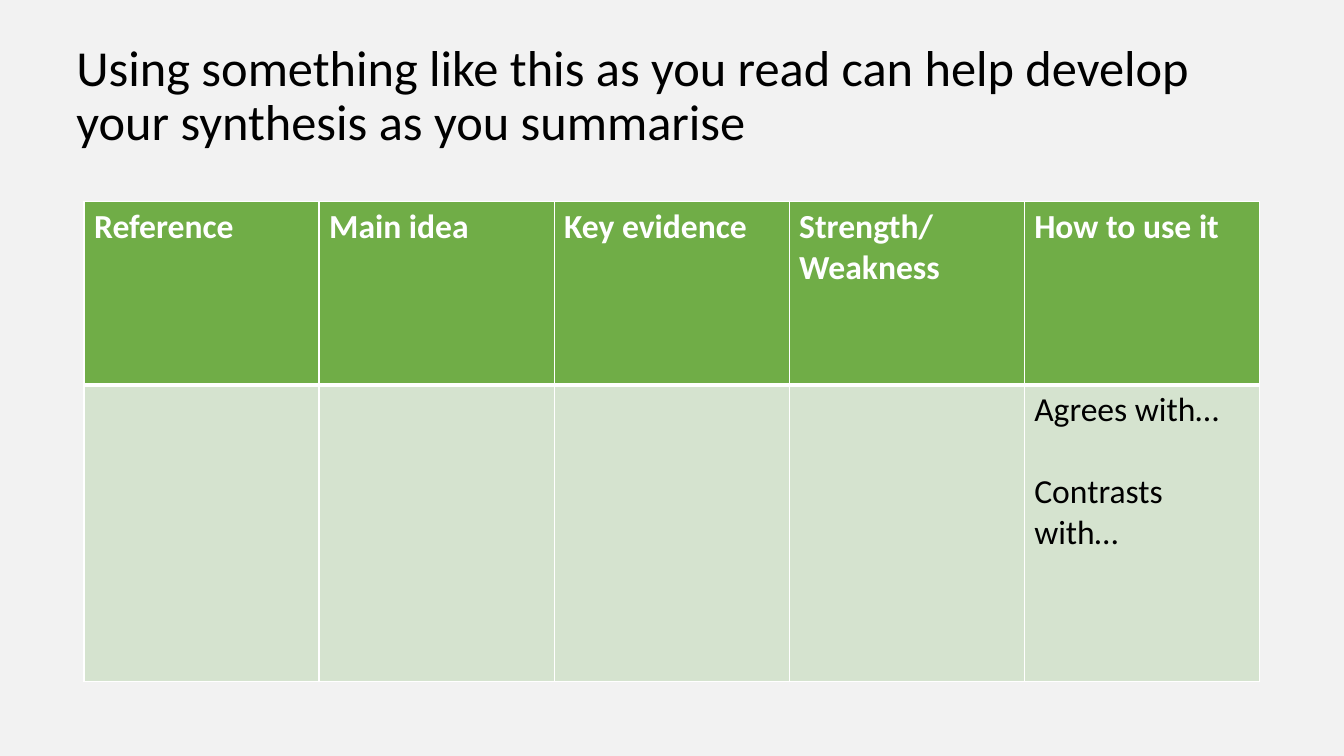
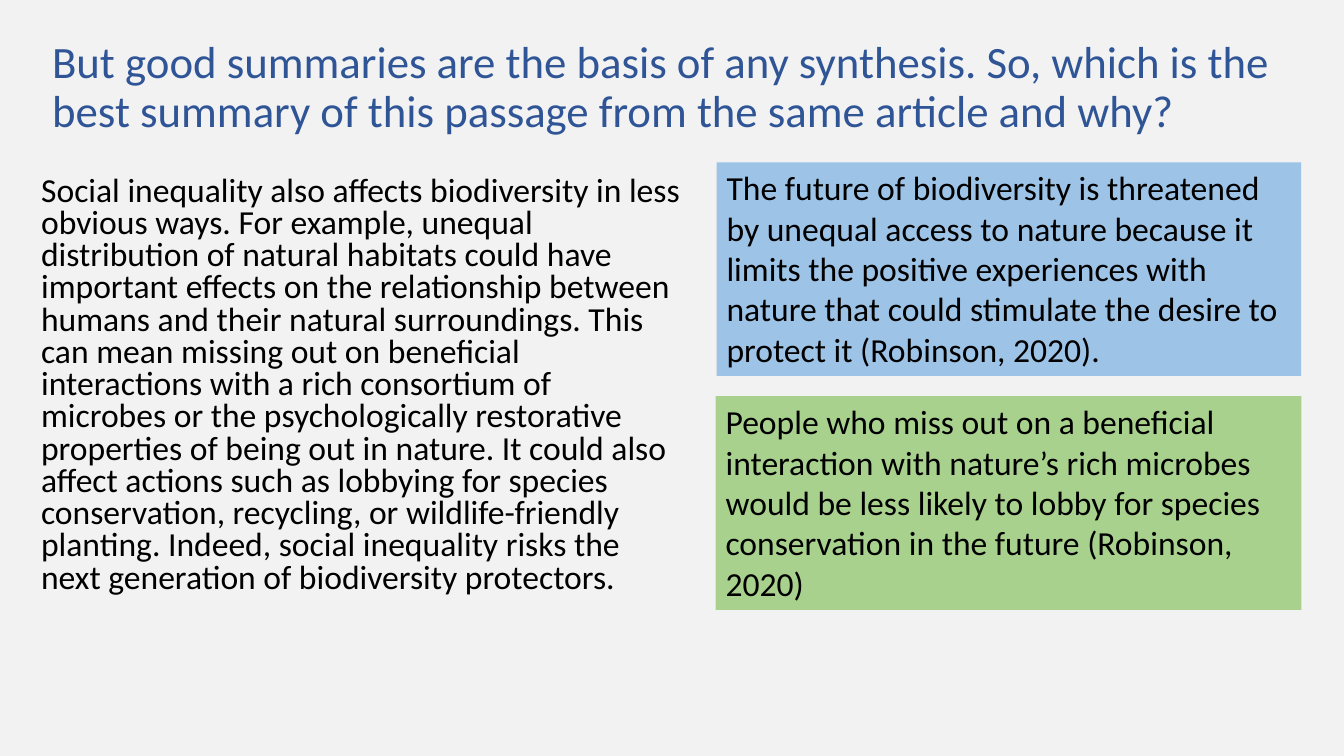
"""Build two slides on turning summaries into a synthesis."""
from dataclasses import dataclass

from lxml.etree import SubElement
from pptx import Presentation
from pptx.dml.color import RGBColor
from pptx.enum.shapes import MSO_SHAPE
from pptx.enum.text import MSO_ANCHOR, PP_ALIGN
from pptx.oxml.ns import qn
from pptx.slide import Slide
from pptx.table import _Cell
from pptx.text.text import TextFrame
from pptx.util import Pt

FONT = "Calibri"
COLORS = {
    "page": "F2F2F2",
    "black": "000000",
    "white": "FFFFFF",
    "title": "2F5597",
    "head": "70AD47",
    "row": "D5E3CF",
    "blue": "9DC3E6",
    "green": "A9D18E",
}
HEADS = ["Reference", "Main idea", "Key evidence", "Strength/Weakness", "How to use it"]
NOTES = ["", "", "", "", "Agrees with…\nContrasts with…"]
PASSAGE = (
    "Social inequality also affects biodiversity in less obvious ways. For example, "
    "unequal distribution of natural habitats could have important effects on the "
    "relationship between humans and their natural surroundings. This can mean missing "
    "out on beneficial interactions with a rich consortium of microbes or "
    "the psychologically restorative properties of being out in nature. It could also "
    "affect actions such as lobbying for species conservation, recycling, or "
    "wildlife-friendly planting. Indeed, social inequality risks the next generation "
    "of biodiversity protectors."
)


@dataclass
class Block:
    """A text block with its place and style, in points."""

    text: str
    left: float
    top: float
    width: float
    height: float
    size: float = 24
    color: str = "black"
    fill: str | None = None
    middle: bool = False
    pitch: float = 1.0
    before: float = 0


@dataclass
class Row:
    """A table row with its texts and style."""

    texts: list[str]
    height: float
    fill: str
    color: str
    bold: bool
    base: float


TITLES = [
    Block("Using something like this as you read can help develop your synthesis as you "
          "summarise", 47.5, 28.8, 846.7, 81.4, 36, middle=True, pitch=0.9),
    Block("But good summaries are the basis of any synthesis. So, which is the best summary "
          "of this passage from the same article and why?", 30.2, 18, 900, 90.7, 32,
          "title", middle=True, pitch=0.9),
]
BLOCKS = [
    Block(PASSAGE, 22.3, 122.4, 470.9, 342.7, pitch=0.8, before=10),
    Block("The future of biodiversity is threatened by unequal access to nature because it "
          "limits the positive experiences with nature that could stimulate the desire to "
          "protect it (Robinson, 2020).", 511.9, 115.9, 417.6, 152.6, fill="blue"),
    Block("People who miss out on a beneficial interaction with nature’s rich microbes would "
          "be less likely to lobby for species conservation in the future (Robinson, 2020)",
          511.2, 283, 418.3, 152.6, fill="green"),
]
ROWS = [
    Row(HEADS, 131, "head", "white", True, 3),
    Row(NOTES, 211.7, "row", "black", False, 1),
]


def shade(name: str) -> RGBColor:
    """Return a named colour."""
    return RGBColor.from_string(COLORS[name])


def style(frame: TextFrame, size: float, color: str, bold: bool = False) -> None:
    """Set the font of all text in a frame."""
    for para in frame.paragraphs:
        para.alignment = PP_ALIGN.LEFT
        for run in para.runs:
            run.font.name = FONT
            run.font.size = Pt(size)
            run.font.bold = bold
            run.font.color.rgb = shade(color)


def add_block(slide: Slide, block: Block) -> None:
    """Draw a text box, or a filled box when it has a fill."""
    place = [Pt(v) for v in (block.left, block.top, block.width, block.height)]
    if block.fill:
        box = slide.shapes.add_shape(MSO_SHAPE.RECTANGLE, *place)
        box.shadow.inherit = False
        box.fill.solid()
        box.fill.fore_color.rgb = shade(block.fill)
        box.line.fill.background()
    else:
        box = slide.shapes.add_textbox(*place)
    frame = box.text_frame
    frame.word_wrap = True
    frame.vertical_anchor = MSO_ANCHOR.MIDDLE if block.middle else MSO_ANCHOR.TOP
    frame.text = block.text
    style(frame, block.size, block.color)
    for para in frame.paragraphs:
        para.line_spacing = block.pitch
        para.space_before = Pt(block.before)


def add_edges(cell: _Cell, base: float) -> None:
    """Draw white cell borders, with the lower one of its own width."""
    props = cell._tc.get_or_add_tcPr()
    for tag, width in (("lnL", 1), ("lnR", 1), ("lnT", 1), ("lnB", base)):
        line = SubElement(props, qn(f"a:{tag}"), w=str(Pt(width)))
        fill = SubElement(line, qn("a:solidFill"))
        SubElement(fill, qn("a:srgbClr"), val=COLORS["white"])


def add_grid(slide: Slide) -> None:
    """Draw the reading table."""
    width, height = Pt(839.5), Pt(sum(row.height for row in ROWS))
    grid = slide.shapes.add_table(
        len(ROWS), len(HEADS), Pt(60), Pt(144), width, height).table
    for line, row in zip(grid.rows, ROWS):
        line.height = Pt(row.height)
        for cell, text in zip(line.cells, row.texts):
            add_edges(cell, row.base)
            cell.fill.solid()
            cell.fill.fore_color.rgb = shade(row.fill)
            cell.text_frame.text = text
            style(cell.text_frame, 24, row.color, row.bold)
            for para in cell.text_frame.paragraphs[1:]:
                para.space_before = Pt(29.3)


def add_page(deck: Presentation, title: Block) -> Slide:
    """Add a blank slide with the shared ground and a title."""
    slide = deck.slides.add_slide(deck.slide_layouts[6])
    slide.background.fill.solid()
    slide.background.fill.fore_color.rgb = shade("page")
    add_block(slide, title)
    return slide


def main() -> None:
    """Build and save the deck."""
    deck = Presentation()
    deck.slide_width, deck.slide_height = Pt(960), Pt(540)
    first, second = [add_page(deck, title) for title in TITLES]
    add_grid(first)
    for block in BLOCKS:
        add_block(second, block)
    deck.save("out.pptx")


if __name__ == "__main__":
    main()
